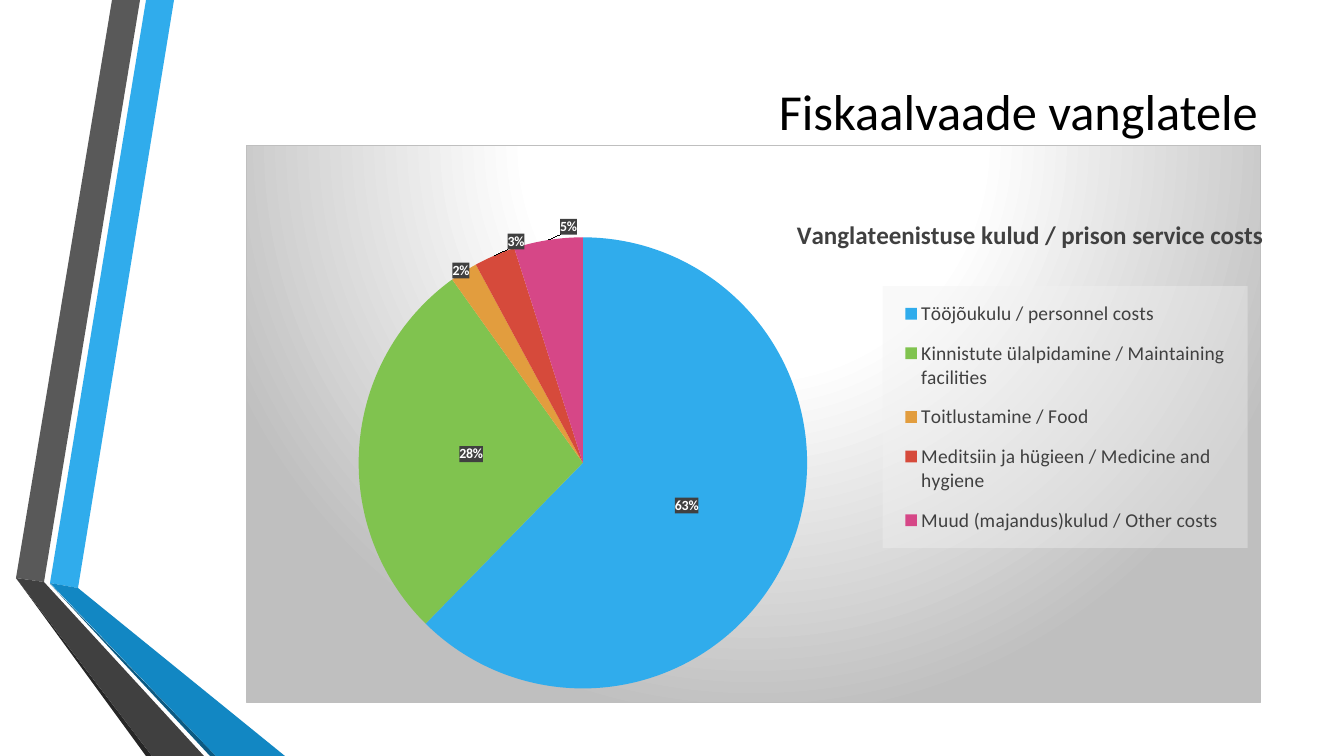
from copy import deepcopy

from lxml.etree import fromstring
from pptx import Presentation
from pptx.chart.data import CategoryChartData
from pptx.dml.color import RGBColor
from pptx.enum.chart import XL_CHART_TYPE, XL_LABEL_POSITION, XL_LEGEND_POSITION
from pptx.enum.text import MSO_ANCHOR, PP_ALIGN
from pptx.oxml.ns import qn
from pptx.util import Pt

# Content
HEADING = "Fiskaalvaade vanglatele"
CHART_TITLE = "Vanglateenistuse kulud / prison service costs"
COSTS = [  # category, percent, colour
    ("Tööjõukulu / personnel costs", 63, "30ACEC"),
    ("Kinnistute ülalpidamine / Maintaining facilities", 28, "80C34F"),
    ("Toitlustamine / Food", 2, "E29D3E"),
    ("Meditsiin ja hügieen / Medicine and hygiene", 3, "D64A3B"),
    ("Muud (majandus)kulud / Other costs", 5, "D64787"),
]
RIBBONS = [  # colour, corners in px
    ("30ACEC", [(50, 583), (78, 588), (174, 0), (146, 0)]),
    ("595959", [(140, 0), (112, 0), (16, 578), (44, 582)]),
    ("262626", [(16, 578), (146, 756), (152, 756)]),
    ("0C5A82", [(50, 584), (210, 756), (216, 756)]),
    ("1287C3", [(50, 583), (216, 756), (285, 756), (78, 588)]),
    ("404040", [(204, 756), (44, 582), (16, 578), (152, 756)]),
]

# Places in px: left, top, width, height
SLIDE = (1344, 756)
HEADING_BOX = (163, 76, 1105, 69)
CHART_BOX = (246, 145, 1022, 558)
PIE_BOX = (359, 237, 452, 452)
LEGEND_BOX = (887, 286, 368, 262)
CHART_TITLE_AT = (796, 212)
LABEL_SHIFTS = {2: (-63, -97), 3: (-23, -118), 4: (3, -125)}

FONT = "Calibri"
EMU_PER_PX = 914400 / 100.8
NS = ('xmlns:c="http://schemas.openxmlformats.org/drawingml/2006/chart" '
      'xmlns:a="http://schemas.openxmlformats.org/drawingml/2006/main"')


def px(*lengths):
    return [round(n * EMU_PER_PX) for n in lengths]


def color(hex_string):
    return RGBColor.from_string(hex_string)


def style(font, size, hex_string, bold=False):
    font.name, font.size, font.bold = FONT, Pt(size), bold
    font.color.rgb = color(hex_string)


def write(frame, text, size, hex_string, bold=False, align=PP_ALIGN.LEFT):
    paragraph = frame.paragraphs[0]
    paragraph.alignment = align
    run = paragraph.add_run()
    run.text = text
    style(run.font, size, hex_string, bold)


def layout(x, y, w=None, h=None, inner=False, edge=True):
    """Chart layout from px; edge measures from the slide, not as a shift."""
    left, top, width, height = CHART_BOX
    if edge:
        x, y = x - left, y - top
    parts = '<c:layoutTarget val="inner"/>' if inner else ""
    if edge:
        parts += '<c:xMode val="edge"/><c:yMode val="edge"/>'
    parts += f'<c:x val="{x / width:.4f}"/><c:y val="{y / height:.4f}"/>'
    if w:
        parts += f'<c:w val="{w / width:.4f}"/><c:h val="{h / height:.4f}"/>'
    return fromstring(f"<c:layout {NS}><c:manualLayout>{parts}</c:manualLayout></c:layout>")


def place(parent, index, new_layout):
    for old in parent.findall(qn("c:layout")):
        parent.remove(old)
    parent.insert(index, new_layout)


def panel(hex_string, alpha):
    return fromstring(f'<c:spPr {NS}><a:solidFill><a:srgbClr val="{hex_string}">'
                      f'<a:alpha val="{alpha * 1000}"/></a:srgbClr></a:solidFill></c:spPr>')


prs = Presentation()
prs.slide_width, prs.slide_height = px(*SLIDE)
slide = prs.slides.add_slide(prs.slide_layouts[6])

# Folded ribbons on the left
for ribbon_color, corners in RIBBONS:
    builder = slide.shapes.build_freeform(*corners[0], scale=EMU_PER_PX)
    builder.add_line_segments(corners[1:], close=True)
    ribbon = builder.convert_to_shape()
    ribbon.shadow.inherit = False
    ribbon.fill.solid()
    ribbon.fill.fore_color.rgb = color(ribbon_color)
    ribbon.line.fill.background()

# Heading
heading = slide.shapes.add_textbox(*px(*HEADING_BOX)).text_frame
heading.word_wrap = True
heading.vertical_anchor = MSO_ANCHOR.MIDDLE
write(heading, HEADING, 36, "000000", align=PP_ALIGN.RIGHT)

# Cost pie
data = CategoryChartData()
data.categories = [name for name, _, _ in COSTS]
data.add_series("Series 1", [percent for _, percent, _ in COSTS])
chart = slide.shapes.add_chart(XL_CHART_TYPE.PIE, *px(*CHART_BOX), data).chart
style(chart.font, 10, "000000")
plot = chart.plots[0]
plot.vary_by_categories = True
costs = plot.series[0]
for i, (_, _, slice_color) in enumerate(COSTS):
    fill = costs.points[i].format.fill
    fill.solid()
    fill.fore_color.rgb = color(slice_color)
plot_area = chart.element.find(".//" + qn("c:plotArea"))
place(plot_area, 0, layout(*PIE_BOX, inner=True))

# Chart title
chart.has_title = True
write(chart.chart_title.text_frame, CHART_TITLE, 18, "404040", bold=True)
place(chart.element.find(".//" + qn("c:title")), 1, layout(*CHART_TITLE_AT))

# Legend on a pale panel
chart.has_legend = True
legend = chart.legend
legend.position = XL_LEGEND_POSITION.RIGHT
legend.include_in_layout = False
style(legend.font, 14, "404040")
legend_xml = chart.element.find(".//" + qn("c:legend"))
place(legend_xml, 1, layout(*LEGEND_BOX))
legend_xml.find(qn("c:overlay")).addnext(panel("F2F2F2", 39))

# Percent labels, the small slices' ones moved outwards
labels = costs.data_labels
labels.show_value = True
labels.number_format = '0"%"'
labels.number_format_is_linked = False
labels.position = XL_LABEL_POSITION.CENTER
style(labels.font, 10, "FFFFFF", bold=True)
labels_xml = chart.element.find(".//" + qn("c:ser")).find(qn("c:dLbls"))
labels_xml.find(qn("c:numFmt")).addnext(panel("404040", 90))
shared = [part for part in labels_xml if part.tag != qn("c:showLeaderLines")]
for position, (i, shift) in enumerate(LABEL_SHIFTS.items()):
    label = fromstring(f'<c:dLbl {NS}><c:idx val="{i}"/></c:dLbl>')
    label.append(layout(*shift, edge=False))
    label.extend(deepcopy(part) for part in shared)
    labels_xml.insert(position, label)

# Chart background: radial gradient and thin border
chart.element.find(qn("c:chart")).addnext(fromstring(
    f'<c:spPr {NS}><a:gradFill><a:gsLst>'
    '<a:gs pos="0"><a:srgbClr val="FFFFFF"/></a:gs>'
    '<a:gs pos="39000"><a:srgbClr val="FFFFFF"/></a:gs>'
    '<a:gs pos="100000"><a:srgbClr val="BFBFBF"/></a:gs></a:gsLst>'
    '<a:path path="circle"><a:fillToRect l="50000" t="-80000" r="50000" b="180000"/></a:path>'
    '</a:gradFill><a:ln w="9525"><a:solidFill><a:srgbClr val="BFBFBF"/></a:solidFill></a:ln></c:spPr>'))

prs.save("out.pptx")
